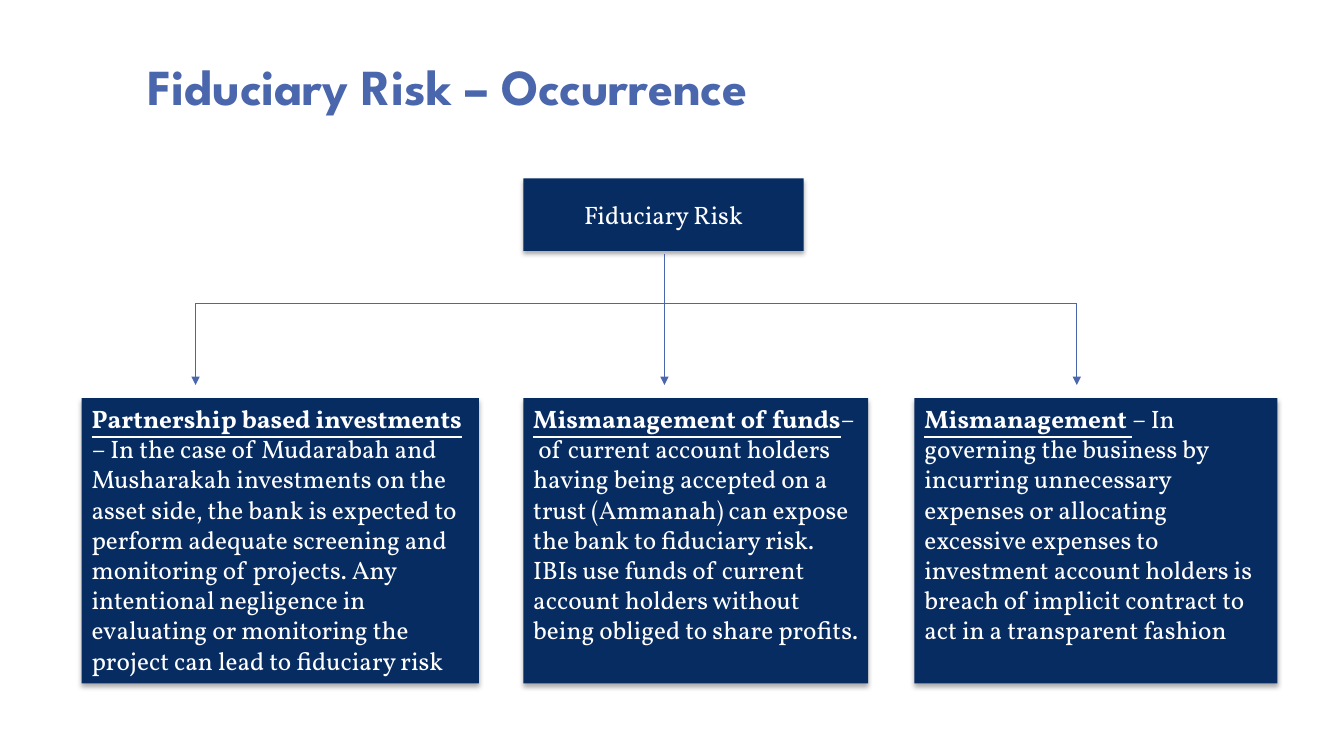
from dataclasses import dataclass

from lxml import etree
from pptx import Presentation
from pptx import util as u
from pptx.dml.color import RGBColor
from pptx.enum import shapes, text
from pptx.oxml import ns

PX = 9144  # 100 px to the inch


@dataclass(frozen=True)
class Theme:
    blue: str = "4A66AC"
    navy: str = "072C62"
    white: str = "FFFFFF"
    black: str = "000000"
    head: str = "League Spartan"
    body: str = "Vollkorn"
    big: int = 36
    small: int = 18


T = Theme()
TITLE = dict(name=T.head, size=u.Pt(T.big), bold=True)
PLAIN = dict(name=T.body, size=u.Pt(T.small), bold=False, underline=False)
TERM = {**PLAIN, "bold": True, "underline": True}

TOP, HIGH = 395, 283
MID, TIP = 301, 382  # crossbar height, arrow tips

# left, width, arrow x, term, explanation
CASES = [
    (81, 394, 194, "Partnership based investments ",
     "– In the case of Mudarabah and Musharakah investments on the asset "
     "side, the bank is expected to perform adequate screening and monitoring "
     "of projects. Any intentional negligence in evaluating or monitoring the "
     "project can lead to fiduciary risk"),
    (519, 342, 659, "Mismanagement of funds",
     "–  of current account holders having being accepted on a trust "
     "(Ammanah) can expose the bank to fiduciary risk. IBIs use funds of "
     "current account holders without being obliged to share profits."),
    (907, 360, 1068, "Mismanagement ",
     "– In governing the business by incurring unnecessary expenses or "
     "allocating excessive expenses to investment account holders is breach "
     "of implicit contract to act in a transparent fashion"),
]


def px(*vals):
    return [u.Emu(v * PX) for v in vals]


def style(obj, form):
    for key, val in form.items():
        setattr(obj, key, val)


def add_run(para, words, form, color):
    run = para.add_run()
    run.text = words
    style(run.font, form)
    run.font.color.rgb = RGBColor.from_string(color)


def add_node(xml, tag, **attrs):
    return etree.SubElement(xml, ns.qn(tag), attrs)


def add_shade(box):
    box.shadow.inherit = False
    fx = box._element.spPr.find(ns.qn("a:effectLst"))
    shade = add_node(fx, "a:outerShdw", blurRad=str(u.Pt(3.5)),
                     dist=str(u.Pt(2.2)), dir="5400000", rotWithShape="0")
    tint = add_node(shade, "a:srgbClr", val=T.black)
    add_node(tint, "a:alpha", val="32000")


def add_box(slide, place, runs, align, frame):
    box = slide.shapes.add_shape(shapes.MSO_SHAPE.RECTANGLE, *px(*place))
    box.fill.solid()
    box.fill.fore_color.rgb = RGBColor.from_string(T.navy)
    box.line.fill.background()
    add_shade(box)
    style(box.text_frame, {"word_wrap": True, **frame})
    para = box.text_frame.paragraphs[0]
    para.alignment = align
    for words, form in runs:
        add_run(para, words, form, T.white)


def add_line(slide, ends, arrow=False):
    line = slide.shapes.add_connector(
        shapes.MSO_CONNECTOR.STRAIGHT, *px(*ends))
    line.line.color.rgb = RGBColor.from_string(T.blue)
    line.line.width = u.Pt(0.5)
    if arrow:
        add_node(line.line._get_or_add_ln(), "a:tailEnd", type="triangle")
    add_node(line._element.spPr, "a:effectLst")


def add_title(slide, words):
    title = slide.shapes.title
    left, top, width, height = px(136, 2, 950, 117)
    style(title, dict(left=left, top=top, width=width, height=height))
    style(title.text_frame, dict(
        vertical_anchor=text.MSO_ANCHOR.BOTTOM, word_wrap=True,
        auto_size=text.MSO_AUTO_SIZE.NONE))
    para = title.text_frame.paragraphs[0]
    style(para, dict(alignment=text.PP_ALIGN.LEFT, line_spacing=0.8))
    add_run(para, words, TITLE, T.blue)


def main():
    deck = Presentation()
    deck.slide_width, deck.slide_height = px(1333, 750)
    slide = deck.slides.add_slide(deck.slide_layouts[5])
    add_title(slide, "Fiduciary Risk – Occurrence")

    # Root of the tree
    add_box(slide, (519, 177, 278, 72), [("Fiduciary Risk", PLAIN)],
            text.PP_ALIGN.CENTER, dict(vertical_anchor=text.MSO_ANCHOR.MIDDLE))

    # Stem, crossbar and arrows
    stops = [case[2] for case in CASES]
    add_line(slide, (stops[0], MID, stops[-1], MID))
    add_line(slide, (stops[1], 252, stops[1], MID))
    for x in stops:
        add_line(slide, (x, MID, x, TIP), arrow=True)

    # Cases
    for left, width, _, term, words in CASES:
        add_box(slide, (left, TOP, width, HIGH), [(term, TERM), (words, PLAIN)],
                text.PP_ALIGN.LEFT,
                dict(vertical_anchor=text.MSO_ANCHOR.TOP,
                     auto_size=text.MSO_AUTO_SIZE.SHAPE_TO_FIT_TEXT))

    deck.save("out.pptx")


if __name__ == "__main__":
    main()
